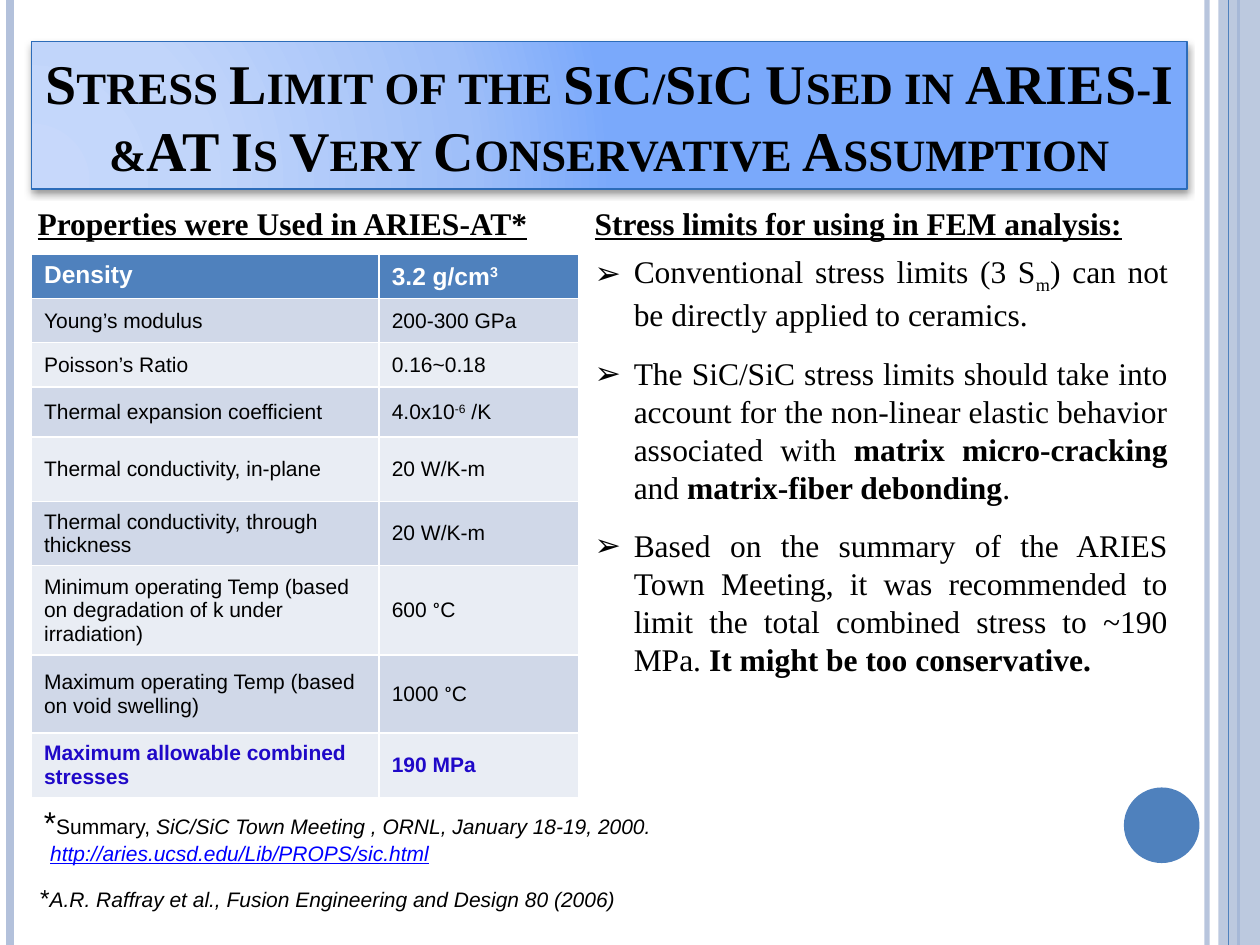
from lxml import etree
from pptx import Presentation
from pptx.dml.color import RGBColor
from pptx.enum import shapes, text
from pptx.oxml import parse_xml
from pptx.oxml.ns import nsdecls, qn
from pptx.util import Inches, Pt

SERIF, SANS = "Times New Roman", "Arial"
BLACK, WHITE, BLUE, PALE = "000000", "FFFFFF", "4F81BD", "B3C1DB"
BOLD, ITALIC = {"bold": True}, {"italic": True}

PROPERTIES = [
    ("Density", ["3.2 g/cm", ("3", {"baseline": 30})], 0.35),
    ("Young’s modulus", "200-300 GPa", 0.35),
    ("Poisson’s Ratio", "0.16~0.18", 0.35),
    ("Thermal expansion coefficient", ["4.0x10", ("-6", {"baseline": 30}), " /K"], 0.4),
    ("Thermal conductivity, in-plane", "20 W/K-m", 0.51),
    ("Thermal conductivity, through thickness", "20 W/K-m", 0.51),
    ("Minimum operating Temp (based on degradation of k under irradiation)",
     ["600 ", ("ᵒ", {"font": "Calibri"}), "C"], 0.71),
    ("Maximum operating Temp (based on void swelling)",
     ["1000 ", ("ᵒ", {"font": "Calibri"}), "C"], 0.62),
    ("Maximum allowable combined stresses", "190 MPa", 0.51),
]
LIMITS = [
    ["Conventional stress limits (3 S", ("m", {"baseline": -25}),
     ") can not be directly applied to ceramics."],
    ["The SiC/SiC stress limits should take into account for the non-linear elastic "
     "behavior associated with ", ("matrix micro-cracking ", BOLD), "and ",
     ("matrix-fiber debonding", BOLD), "."],
    ["Based on the summary of the ARIES Town Meeting, it was recommended to limit the "
     "total combined stress to ~190 MPa. ", ("It might be too conservative.", BOLD)],
]


def rgb(color):
    return RGBColor.from_string(color)


def set_alpha(fill_owner, percent):
    """Make the first solid colour inside an XML element partly transparent."""
    color = next(fill_owner.iter(qn("a:srgbClr")))
    etree.SubElement(color, qn("a:alpha"), val=str(percent * 1000))


def write(para, spans, size, font=SANS, color=BLACK, **base):
    """Fill a paragraph with plain strings or (string, style) pairs."""
    for item in [spans] if isinstance(spans, str) else spans:
        words, extra = (item, {}) if isinstance(item, str) else item
        style = {"size": size, "font": font, "color": color, **base, **extra}
        span = para.add_run()
        span.text = words
        span.font.size = Pt(style["size"])
        span.font.name = style["font"]
        span.font.color.rgb = rgb(style["color"])
        span.font.bold = style.get("bold", False)
        span.font.italic = style.get("italic", False)
        span.font.underline = style.get("underline", False)
        if "baseline" in style:
            span.font._element.set("baseline", str(style["baseline"] * 1000))


def place(shape, left, top, width, height):
    shape.left, shape.top = Inches(left), Inches(top)
    shape.width, shape.height = Inches(width), Inches(height)


def set_bullet(para, char=None, indent=0.0):
    props = para._p.get_or_add_pPr()
    props.set("marL", str(Inches(indent)))
    props.set("indent", str(-Inches(indent)))
    if char:
        etree.SubElement(props, qn("a:buChar"), char=char)
    else:
        etree.SubElement(props, qn("a:buNone"))


def add_text_box(page, left, top, width, height):
    box = page.shapes.add_textbox(*map(Inches, (left, top, width, height)))
    box.text_frame.word_wrap = True
    box.text_frame.auto_size = text.MSO_AUTO_SIZE.SHAPE_TO_FIT_TEXT
    return box.text_frame


def add_rule(page, x, height, color, width):
    rule = page.shapes.add_connector(
        shapes.MSO_CONNECTOR.STRAIGHT, Inches(x), 0, Inches(x), Inches(height))
    rule.line.color.rgb = rgb(color)
    rule.line.width = Pt(width)
    etree.SubElement(rule._element.spPr, qn("a:effectLst"))
    return rule


def add_plain_shape(page, kind, left, top, width, height, color):
    shape = page.shapes.add_shape(kind, *map(Inches, (left, top, width, height)))
    shape.shadow.inherit = False
    shape.fill.solid()
    shape.fill.fore_color.rgb = rgb(color)
    shape.line.fill.background()
    return shape


def add_side_decoration(page, height):
    set_alpha(add_rule(page, 9.58, height, PALE, 3).line._ln, 93)
    add_rule(page, 0.08, height, PALE, 4.5)
    add_rule(page, 9.83, height, BLUE, 1.5)
    band = add_plain_shape(page, shapes.MSO_SHAPE.RECTANGLE, 9.67, 0, 0.33, height, PALE)
    set_alpha(band._element.spPr, 87)
    add_rule(page, 9.75, height, BLUE, 0.75)
    add_plain_shape(page, shapes.MSO_SHAPE.OVAL, 8.92, 6.25, 0.6, 0.6, BLUE)


def fill_title(title, left, top, width, height):
    place(title, left, top, width, height)
    frame = title.text_frame
    frame.auto_size = text.MSO_AUTO_SIZE.NONE
    frame.vertical_anchor = text.MSO_ANCHOR.BOTTOM
    para = frame.paragraphs[0]
    para.alignment = text.PP_ALIGN.CENTER
    write(para, "Stress Limit of the SiC/SiC Used in ARIES-I &AT "
          "Is Very Conservative Assumption", 32, SERIF, bold=True)
    para.runs[0].font._element.set("cap", "small")

    stops = [(0, "C7D8FB"), (30, "C1D5FA"), (75, "9FBFF9"), (100, "7AA9FB")]
    stop_xml = "".join(f'<a:gs pos="{pos * 1000}"><a:srgbClr val="{color}"/></a:gs>'
                       for pos, color in stops)
    props = title._element.spPr
    props.append(parse_xml(
        f'<a:gradFill {nsdecls("a")} rotWithShape="1"><a:gsLst>{stop_xml}</a:gsLst>'
        '<a:path path="circle"><a:fillToRect l="5000" t="100000" r="120000" b="10000"/>'
        '</a:path></a:gradFill>'))
    title.line.color.rgb = rgb("2C6CB9")
    title.line.width = Pt(1)
    props.append(parse_xml(
        f'<a:effectLst {nsdecls("a")}><a:outerShdw blurRad="{Pt(4)}" dist="{Pt(2)}" '
        'dir="5400000" rotWithShape="0"><a:srgbClr val="000000"><a:alpha val="40000"/>'
        '</a:srgbClr></a:outerShdw></a:effectLst>'))


def add_property_table(page, left, top, columns):
    heights = [row[2] for row in PROPERTIES]
    table = page.shapes.add_table(
        len(PROPERTIES), len(columns), Inches(left), Inches(top),
        Inches(sum(columns)), Inches(sum(heights))).table
    for column, width in zip(table.columns, columns):
        column.width = Inches(width)
    last = len(PROPERTIES) - 1
    for index, (name, value, height) in enumerate(PROPERTIES):
        table.rows[index].height = Inches(height)
        fill = BLUE if index == 0 else ("E9EDF4", "D0D8E8")[index % 2]
        color = {0: WHITE, last: "1F08C8"}.get(index, BLACK)
        for cell, spans in zip(table.rows[index].cells, (name, value)):
            cell.fill.solid()
            cell.fill.fore_color.rgb = rgb(fill)
            cell.vertical_anchor = text.MSO_ANCHOR.MIDDLE
            write(cell.text_frame.paragraphs[0], spans, 12 if index else 14,
                  color=color, bold=index in (0, last))
    table.cell(0, 0).vertical_anchor = text.MSO_ANCHOR.TOP


def fill_stress_limits(body, left, top, width, height):
    place(body, left, top, width, height)
    frame = body.text_frame
    frame.auto_size = text.MSO_AUTO_SIZE.NONE
    heading = frame.paragraphs[0]
    heading.alignment = text.PP_ALIGN.JUSTIFY
    heading.space_before = Pt(0)
    set_bullet(heading)
    write(heading, "Stress limits for using in FEM analysis:", 18, SERIF,
          bold=True, underline=True)
    for spans in LIMITS:
        para = frame.add_paragraph()
        para.alignment = text.PP_ALIGN.JUSTIFY
        para.space_before = para.space_after = Pt(6)
        set_bullet(para, "➢", 0.31)
        write(para, spans, 18, SERIF)


def add_references(page, left, top):
    summary = add_text_box(page, left, top, 9.25, 0.81)
    write(summary.paragraphs[0],
          [("*", {"size": 18}), "Summary, ",
           ("SiC/SiC Town Meeting , ORNL, January 18-19, 2000.", ITALIC)], 12)
    address = summary.add_paragraph()
    address._p.get_or_add_pPr().set("marL", str(Inches(0.05)))
    write(address, "http://aries.ucsd.edu/Lib/PROPS/sic.html", 12,
          color="0000FF", italic=True, underline=True)
    article = add_text_box(page, left - 0.03, top + 0.64, 8.83, 0.34)
    write(article.paragraphs[0],
          [("*", {"size": 14}),
           ("A.R. Raffray et al., Fusion Engineering and Design 80 (2006)", ITALIC)], 12)


def main():
    deck = Presentation()
    deck.slide_width, deck.slide_height = Inches(10), Inches(7.5)
    page = deck.slides.add_slide(deck.slide_layouts[1])
    add_side_decoration(page, 7.5)
    fill_title(page.shapes.title, 0.25, 0.33, 9.17, 1.17)
    add_property_table(page, 0.25, 2.02, (2.76, 1.58))
    add_references(page, 0.25, 6.32)
    fill_stress_limits(page.placeholders[1], 4.62, 1.57, 4.75, 3.85)
    heading = add_text_box(page, 0.2, 1.57, 4.12, 0.4)
    write(heading.paragraphs[0], "Properties were Used in ARIES-AT*", 18, SERIF,
          bold=True, underline=True)
    deck.save("out.pptx")


if __name__ == "__main__":
    main()
